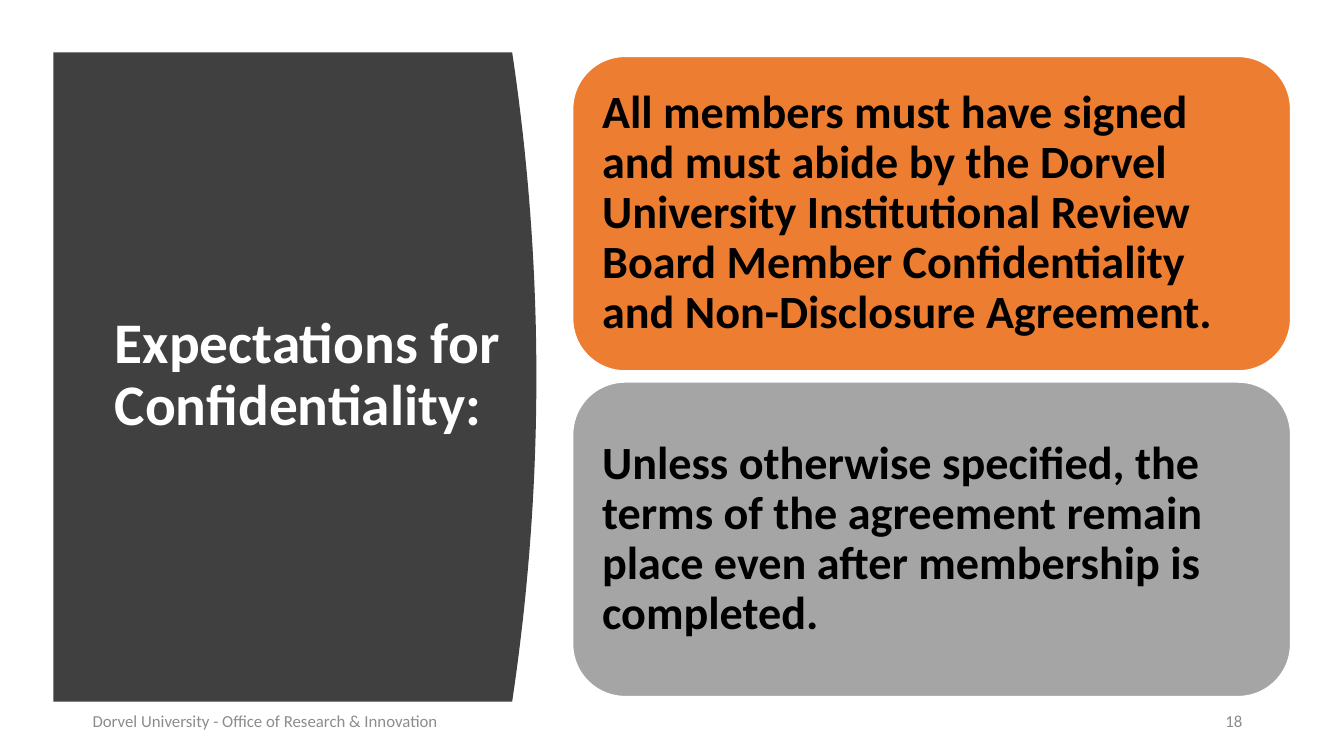
from pptx import Presentation, util as u
from pptx.dml.color import RGBColor
from pptx.enum import shapes, text

COLOURS = {
    "panel": "404040", "orange": "ED7D31", "grey": "A5A5A5",
    "white": "FFFFFF", "black": "000000", "footer": "8C8C8C",
}
EXPECTATIONS = [
    ("orange", "All members must have signed and must abide by the Dorvel University "
               "Institutional Review Board Member Confidentiality and Non-Disclosure Agreement."),
    ("grey", "Unless otherwise specified, the terms of the agreement remain place even "
             "after membership is completed."),
]


def colour(name):
    """Return the named colour."""
    return RGBColor.from_string(COLOURS[name])


def write(shape, words, size, ink, bold=False, spacing=1.0, align=text.PP_ALIGN.LEFT):
    """Put one formatted, vertically centred paragraph into a shape."""
    frame = shape.text_frame
    frame.text = words
    frame.word_wrap = True
    frame.vertical_anchor = text.MSO_ANCHOR.MIDDLE
    para = frame.paragraphs[0]
    para.alignment = align
    para.line_spacing = spacing
    font = para.runs[0].font
    font.name, font.size, font.bold = "Calibri", u.Pt(size), bold
    font.color.rgb = colour(ink)


def add_label(page, left, top, width, height, words, size, ink, **style):
    """Add a plain text box."""
    box = page.shapes.add_textbox(*map(u.Inches, (left, top, width, height)))
    write(box, words, size, ink, **style)


def add_panel(page, left, top, bottom, edge, bulge, steps=40):
    """Add the dark panel whose right side bows outwards as a parabola."""
    curve = []
    for step in range(steps + 1):
        offset = 2 * step / steps - 1
        curve.append((edge + bulge * (1 - offset ** 2), top + (bottom - top) * step / steps))
    points = [(u.Inches(x), u.Inches(y)) for x, y in curve + [(left, bottom)]]
    builder = page.shapes.build_freeform(u.Inches(left), u.Inches(top))
    builder.add_line_segments(points, close=True)
    panel = builder.convert_to_shape()
    panel.shadow.inherit = False
    panel.fill.solid()
    panel.fill.fore_color.rgb = colour("panel")
    panel.line.fill.background()


def add_card(page, top, fill, words):
    """Add a rounded card holding one expectation."""
    card = page.shapes.add_shape(
        shapes.MSO_SHAPE.ROUNDED_RECTANGLE, *map(u.Inches, (5.68, top, 7.12, 3.12)))
    card.shadow.inherit = False
    card.fill.solid()
    card.fill.fore_color.rgb = colour(fill)
    card.line.color.rgb = colour("white")
    card.line.width = u.Pt(1)
    frame = card.text_frame
    frame.margin_left = frame.margin_right = u.Inches(0.14)
    frame.margin_top = frame.margin_bottom = u.Inches(0.14)
    write(card, words, 33, "black", bold=True, spacing=0.9)


def main():
    """Build and save the slide."""
    deck = Presentation()
    deck.slide_width, deck.slide_height = u.Inches(13.33), u.Inches(7.5)
    page = deck.slides.add_slide(deck.slide_layouts[6])
    add_panel(page, left=0.53, top=0.52, bottom=6.96, edge=5.08, bulge=0.24)
    add_label(page, 1.04, 1.11, 4.07, 5.24, "Expectations for Confidentiality:",
              41, "white", bold=True, spacing=0.9)
    add_label(page, 0.82, 6.95, 4.5, 0.4,
              "Dorvel University - Office of Research & Innovation", 12, "footer")
    add_label(page, 11.73, 6.95, 0.69, 0.4, "18", 12, "footer", align=text.PP_ALIGN.RIGHT)
    for index, (fill, words) in enumerate(EXPECTATIONS):
        add_card(page, 0.56 + 3.23 * index, fill, words)
    deck.save("out.pptx")


if __name__ == "__main__":
    main()
